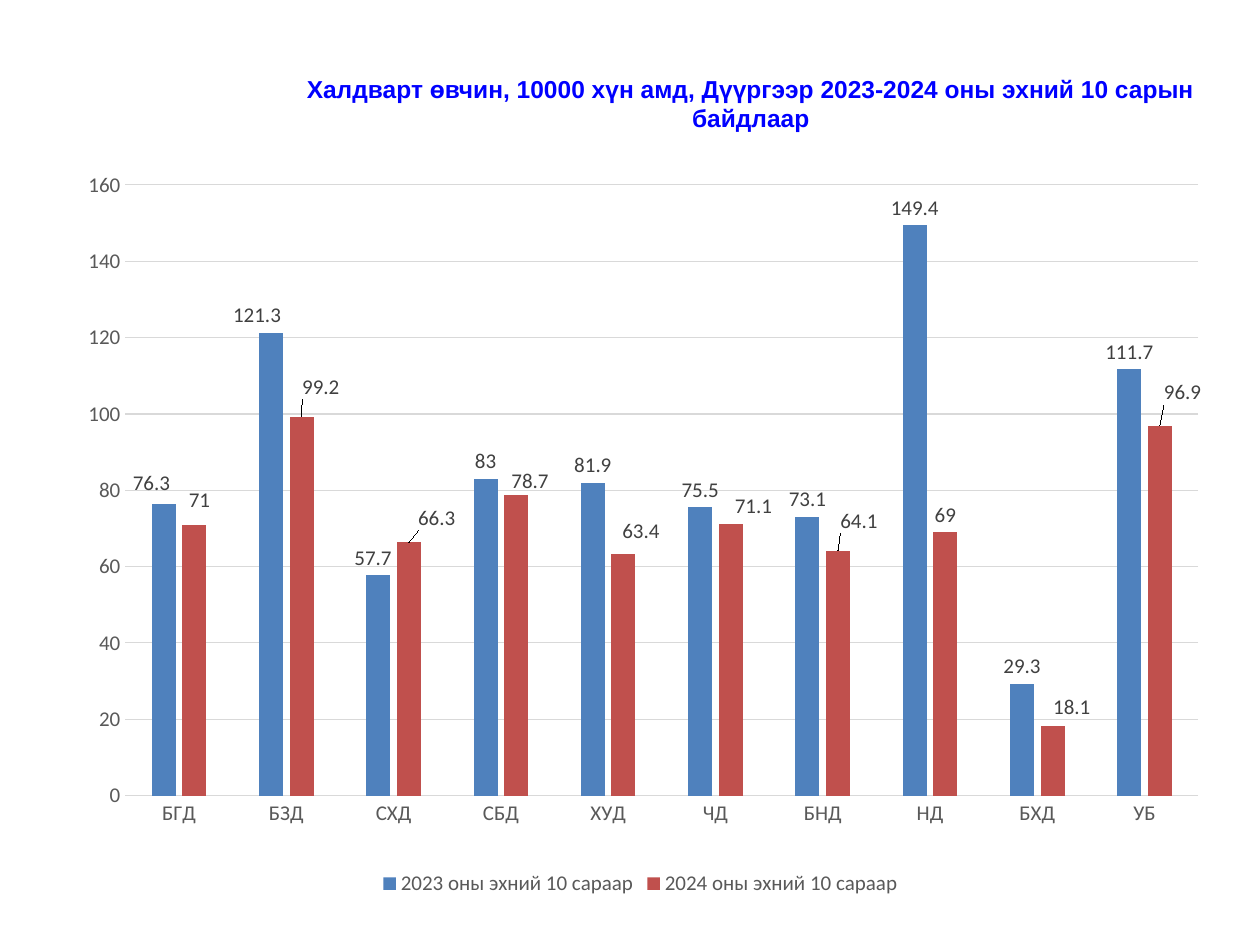
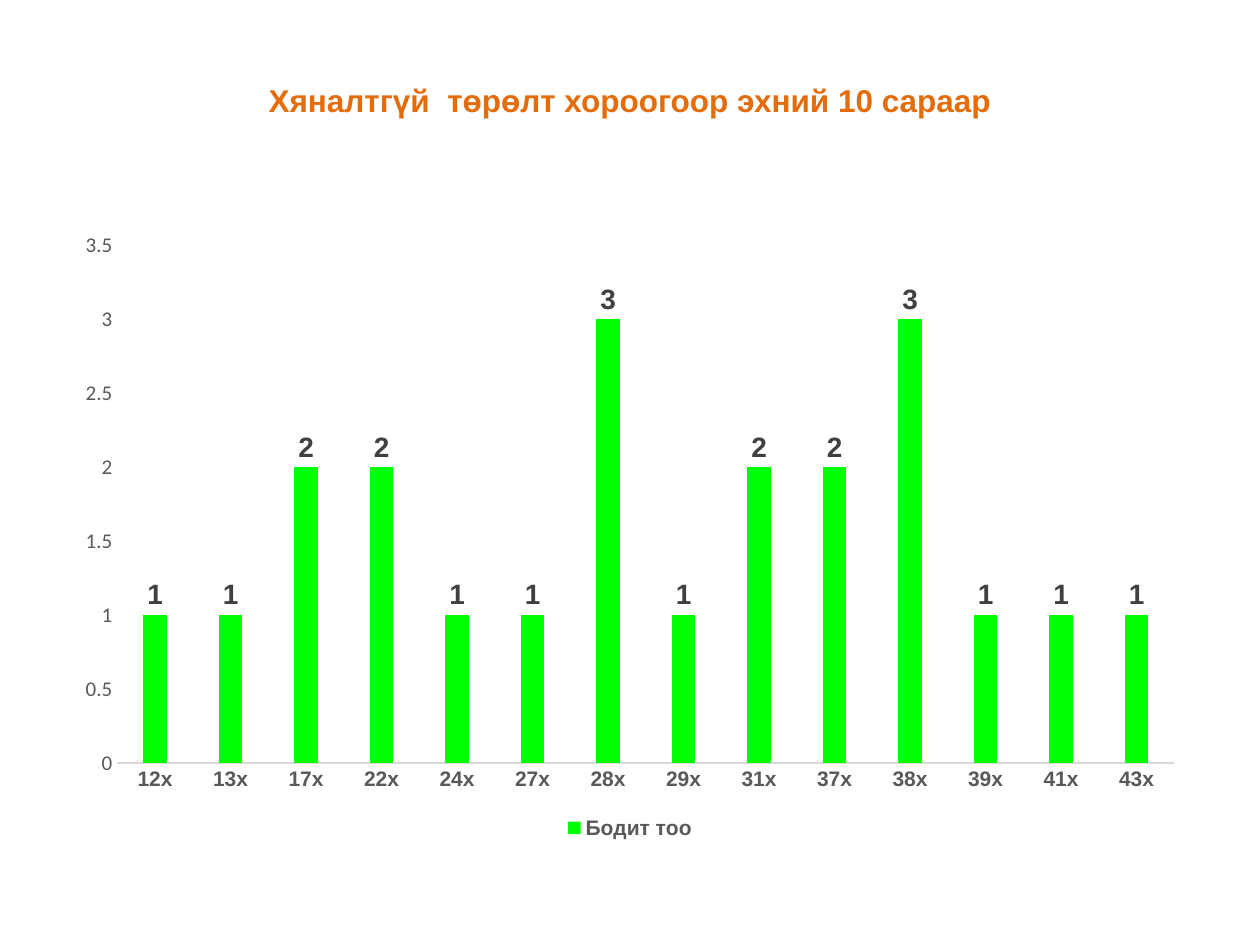
from pptx import Presentation
from pptx.chart.data import CategoryChartData
from pptx.dml.color import RGBColor
from pptx.enum.chart import XL_CHART_TYPE, XL_LABEL_POSITION, XL_LEGEND_POSITION, XL_TICK_MARK
from pptx.enum.text import MSO_ANCHOR, PP_ALIGN
from pptx.oxml import parse_xml
from pptx.oxml.ns import nsdecls, qn
from pptx.util import Pt

COLUMNS = XL_CHART_TYPE.COLUMN_CLUSTERED
ABOVE = XL_LABEL_POSITION.OUTSIDE_END
BOTTOM = XL_LEGEND_POSITION.BOTTOM
NO_TICK = XL_TICK_MARK.NONE
MIDDLE = MSO_ANCHOR.MIDDLE
CENTER = PP_ALIGN.CENTER

COLORS = {
    "title": "0000FF", "accent": "E46C0A", "axis": "595959", "label": "404040",
    "grid": "D9D9D9", "before": "4F81BD", "after": "C0504D", "count": "00FF00",
}
TITLE = {"name": "Arial", "bold": True}
PLAIN = {"name": "Calibri", "size": Pt(12), "bold": False}
STRONG = {"name": "Arial", "size": Pt(12), "bold": True}

DISTRICTS = ["БГД", "БЗД", "СХД", "СБД", "ХУД", "ЧД", "БНД", "НД", "БХД", "УБ"]
RATES = [
    ("2023 оны эхний 10 сараар", "before",
     [76.3, 121.3, 57.7, 83, 81.9, 75.5, 73.1, 149.4, 29.3, 111.7]),
    ("2024 оны эхний 10 сараар", "after",
     [71, 99.2, 66.3, 78.7, 63.4, 71.1, 64.1, 69, 18.1, 96.9]),
]
# Label shifts in points, by series and then by district index
SHIFTS = [
    {0: (-7, -2), 1: (-8, 0), 2: (-3, 0)},
    {0: (3, -4), 1: (11, -7), 2: (16, -4), 3: (8, 2), 4: (10, -3),
     5: (13, 0), 6: (12, -7), 8: (11, -1), 9: (13, -9)},
]
WARDS = [f"{n}х" for n in (12, 13, 17, 22, 24, 27, 28, 29, 31, 37, 38, 39, 41, 43)]
COUNTS = [("Бодит тоо", "count", [1, 1, 2, 2, 1, 1, 3, 1, 2, 2, 3, 1, 1, 1])]


def layout(**parts):
    """Return a manual chart layout element."""
    body = "".join(f'<c:{key} val="{val}"/>' for key, val in parts.items())
    return parse_xml(f"<c:layout {nsdecls('c')}><c:manualLayout>{body}"
                     "</c:manualLayout></c:layout>")


class Deck:
    def __init__(self):
        self.prs = Presentation()
        self.prs.slide_width, self.prs.slide_height = Pt(720), Pt(540)
        self.slide = None

    def color(self, name):
        return RGBColor.from_string(COLORS[name])

    def style(self, font, form, color):
        for key, val in form.items():
            setattr(font, key, val)
        font.color.rgb = self.color(color)

    def title(self, text, box, size, color, bottom=3.6):
        self.slide = self.prs.slides.add_slide(self.prs.slide_layouts[5])
        shape = self.slide.shapes.title
        shape.left, shape.top, shape.width, shape.height = map(Pt, box)
        frame = shape.text_frame
        frame.text = text
        frame.word_wrap = True
        frame.vertical_anchor = MIDDLE
        frame.margin_bottom = Pt(bottom)
        line = frame.paragraphs[0]
        line.alignment = CENTER
        self.style(line.runs[0].font, {**TITLE, "size": Pt(size)}, color)

    def chart(self, box, cats, rows, top, step, names=PLAIN, marks=PLAIN, grid=False):
        data = CategoryChartData()
        data.categories = cats
        for name, _, vals in rows:
            data.add_series(name, vals)
        chart = self.slide.shapes.add_chart(COLUMNS, *map(Pt, box), data).chart
        chart.has_title = False
        chart.font.name, chart.font.size = "Calibri", Pt(10)
        chart.has_legend = True
        chart.legend.position = BOTTOM
        chart.legend.include_in_layout = False
        self.style(chart.legend.font, names, "axis")
        self.axes(chart, names, top, step, grid)
        plot = chart.plots[0]
        plot.gap_width, plot.overlap = 219, -27
        plot.vary_by_categories = False
        for series, (_, color, _) in zip(plot.series, rows):
            series.format.fill.solid()
            series.format.fill.fore_color.rgb = self.color(color)
            labels = series.data_labels
            labels.show_value = True
            labels.position = ABOVE
            self.style(labels.font, marks, "label")
        return chart

    def rule(self, line):
        line.color.rgb = self.color("grid")
        line.width = Pt(0.75)

    def axes(self, chart, names, top, step, grid):
        for axis, form in ((chart.category_axis, names), (chart.value_axis, PLAIN)):
            axis.major_tick_mark = axis.minor_tick_mark = NO_TICK
            self.style(axis.tick_labels.font, form, "axis")
        self.rule(chart.category_axis.format.line)
        scale = chart.value_axis
        scale.minimum_scale, scale.maximum_scale, scale.major_unit = 0, top, step
        scale.format.line.fill.background()
        scale.has_major_gridlines = grid
        if grid:
            self.rule(scale.major_gridlines.format.line)

    def place(self, chart, x, y, w, h):
        """Fix the inner plot area, in fractions of the chart."""
        area = chart._chartSpace.find(".//" + qn("c:plotArea"))
        for old in area.findall(qn("c:layout")):
            area.remove(old)
        area.insert(0, layout(layoutTarget="inner", xMode="edge", yMode="edge",
                              x=x, y=y, w=w, h=h))

    def shift(self, chart, box, shifts):
        """Move single value labels off their default spots."""
        wide, high = box[2:]
        for series, moves in zip(chart.plots[0].series, shifts):
            for index in moves:
                label = series.points[index].data_label
                label.position = ABOVE
                self.style(label.font, PLAIN, "label")
            for item in series.data_labels._element.findall(qn("c:dLbl")):
                dx, dy = moves[int(item.find(qn("c:idx")).get("val"))]
                item.insert(1, layout(x=round(dx / wide, 4), y=round(dy / high, 4)))


def main():
    deck = Deck()
    deck.title("Халдварт өвчин, 10000 хүн амд, Дүүргээр 2023-2024 оны эхний 10 сарын байдлаар",
               (156, 14, 546, 90), 14, "title")
    box = (36, 96, 660, 419)
    chart = deck.chart(box, DISTRICTS, RATES, 160, 20, grid=True)
    deck.place(chart, 0.054, 0.023, 0.929, 0.833)
    deck.shift(chart, box, SHIFTS)

    deck.title("Хяналтгүй  төрөлт хороогоор эхний 10 сараар",
               (36, 36, 648, 74), 18, "accent", bottom=35)
    deck.chart((36, 126, 648, 356.4), WARDS, COUNTS, 3.5, 0.5,
               names=STRONG, marks={**STRONG, "size": Pt(16)})
    deck.prs.save("out.pptx")


if __name__ == "__main__":
    main()
